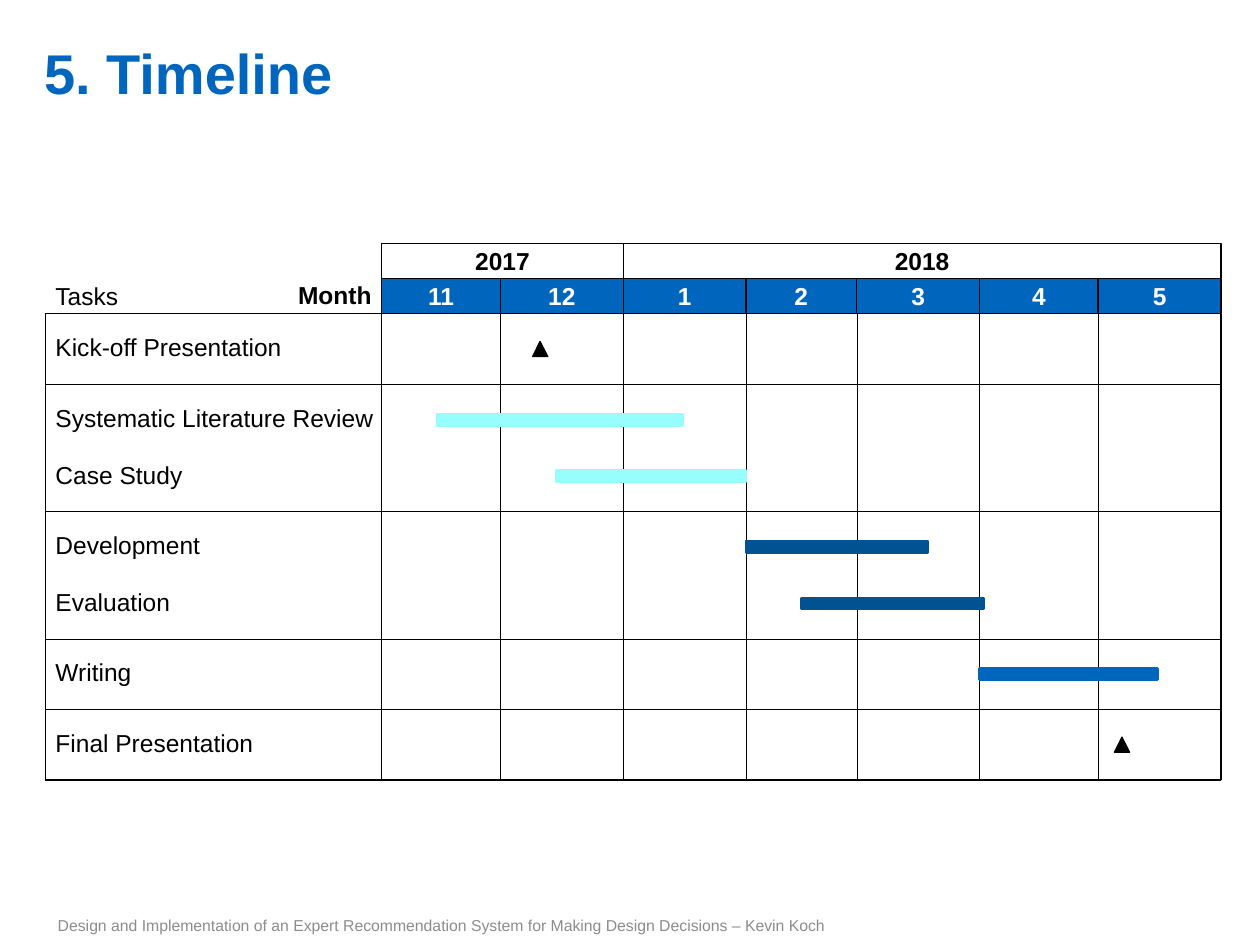
from itertools import accumulate

from lxml import etree
from pptx import Presentation
from pptx.dml.color import RGBColor
from pptx.enum.shapes import MSO_CONNECTOR, MSO_SHAPE
from pptx.enum.text import MSO_ANCHOR, PP_ALIGN
from pptx.oxml.ns import qn
from pptx.util import Inches, Pt

RECTANGLE, TRIANGLE = MSO_SHAPE.RECTANGLE, MSO_SHAPE.ISOSCELES_TRIANGLE
STRAIGHT = MSO_CONNECTOR.STRAIGHT
TOP, MIDDLE, BOTTOM = MSO_ANCHOR.TOP, MSO_ANCHOR.MIDDLE, MSO_ANCHOR.BOTTOM
LEFT, CENTER, RIGHT = PP_ALIGN.LEFT, PP_ALIGN.CENTER, PP_ALIGN.RIGHT
BLACK, WHITE, BLUE, NAVY, CYAN, GREY = (
    RGBColor.from_string(value)
    for value in ("000000", "FFFFFF", "0065BD", "005293", "97FDFD", "8C8C8C"))

deck = Presentation()
deck.slide_width, deck.slide_height = Inches(10), Inches(7.5)
page = deck.slides.add_slide(deck.slide_layouts[6])


def write(box, text, size=14, color=BLACK, bold=False, align=LEFT,
          anchor=TOP, insets=(0, 0), spacing=None):
    """Set the single paragraph of a box; insets are horizontal, vertical."""
    frame = box.text_frame
    frame.word_wrap, frame.vertical_anchor = True, anchor
    frame.margin_left = frame.margin_right = Inches(insets[0])
    frame.margin_top = frame.margin_bottom = Inches(insets[1])
    para = frame.paragraphs[0]
    para.alignment, para.line_spacing = align, spacing
    span = para.add_run()
    span.text = text
    span.font.name, span.font.size, span.font.bold = "Arial", Pt(size), bold
    span.font.color.rgb = color


def add_shape(kind, left, top, width, height, fill, line, weight):
    shape = page.shapes.add_shape(
        kind, Inches(left), Inches(top), Inches(width), Inches(height))
    shape.shadow.inherit = False
    if fill is None:
        shape.fill.background()
    else:
        shape.fill.solid()
        shape.fill.fore_color.rgb = fill
    shape.line.color.rgb, shape.line.width = line, Pt(weight)
    return shape


# Time axis: month columns are as wide as their days
months = [("11", 30), ("12", 31), ("1", 31), ("2", 28),
          ("3", 31), ("4", 30), ("5", 31)]
table_left, axis_left, table_right = 0.36, 3.03, 9.69
day = (table_right - axis_left) / sum(days for _, days in months)
edges = [axis_left + day * count
         for count in accumulate((days for _, days in months), initial=0)]
header_height = 0.28
grid_top = 2.49

# Task rows: label, start day, length in days (0 = milestone), color
groups = [
    [("Kick-off Presentation", 40, 0, BLACK)],
    [("Systematic Literature Review", 14, 62, CYAN),
     ("Case Study", 44, 48, CYAN)],
    [("Development", 92, 46, NAVY), ("Evaluation", 106, 46, NAVY)],
    [("Writing", 151, 45, BLUE)],
    [("Final Presentation", 187, 0, BLACK)],
]
row_height, task_step = 0.56, 0.45
rows = list(accumulate(
    (row_height + task_step * (len(group) - 1) for group in groups),
    initial=grid_top))

# Title and footer
title = page.shapes.add_textbox(
    Inches(0.35), Inches(0.31), Inches(8.57), Inches(0.54))
write(title, "5. Timeline", 32, BLUE, bold=True)
footer = page.shapes.add_textbox(
    Inches(table_left), Inches(7.18), Inches(8.01), Inches(0.32))
write(footer, "Design and Implementation of an Expert Recommendation System "
      "for Making Design Decisions – Kevin Koch", 9, GREY,
      anchor=MIDDLE, insets=(0.1, 0.05))

# Header cells: label, first edge, last edge, rows above the grid, fill, text
headers = [("2017", 0, 2, 2, None, BLACK), ("2018", 2, 7, 2, None, BLACK)]
headers += [(name, i, i + 1, 1, BLUE, WHITE)
            for i, (name, _) in enumerate(months)]
for name, first, last, level, fill, color in headers:
    cell = add_shape(RECTANGLE, edges[first], grid_top - level * header_height,
                     edges[last] - edges[first], header_height,
                     fill, BLACK, 0.75)
    write(cell, name, color=color, bold=True, align=CENTER, anchor=MIDDLE,
          insets=(0, 0.03))

# Grid lines: the frame and the axis are heavier than the inner lines
heavy = {table_left, edges[0], edges[-1], rows[0], rows[-1]}
lines = [(x, rows[0], x, rows[-1], x in heavy) for x in [table_left, *edges]]
lines += [(table_left, y, table_right, y, y in heavy) for y in rows]
for x1, y1, x2, y2, is_heavy in lines:
    rule = page.shapes.add_connector(
        STRAIGHT, Inches(x1), Inches(y1), Inches(x2), Inches(y2))
    rule.line.color.rgb = BLACK
    rule.line.width = Pt(0.75 if is_heavy else 0.25)
    etree.SubElement(rule.element.spPr, qn("a:effectLst"))

# Bars, milestones and task labels; labels may fill the whole task column
label_left, label_height = 0.44, 0.21
label_width = axis_left - label_left
bar_height, marker = 0.09, 0.12
for group, top in zip(groups, rows):
    for i, (name, start, length, color) in enumerate(group):
        middle = top + row_height / 2 + i * task_step
        x = axis_left + start * day
        if length:
            add_shape(RECTANGLE, x, middle - bar_height / 2, length * day,
                      bar_height, color, color, 1.5)
        else:
            add_shape(TRIANGLE, x - marker / 2, middle - marker / 2,
                      marker, marker, color, color, 0.75)
        label = page.shapes.add_textbox(
            Inches(label_left), Inches(middle - label_height / 2),
            Inches(label_width), Inches(label_height))
        write(label, name, spacing=0.9)

# Corner labels
tasks = page.shapes.add_textbox(
    Inches(label_left), Inches(2.26), Inches(0.7), Inches(label_height))
write(tasks, "Tasks", anchor=BOTTOM, spacing=0.9)
month = page.shapes.add_textbox(
    Inches(2.15), Inches(2.23), Inches(0.8), Inches(0.23))
write(month, "Month", bold=True, align=RIGHT, anchor=BOTTOM)

deck.save("out.pptx")
